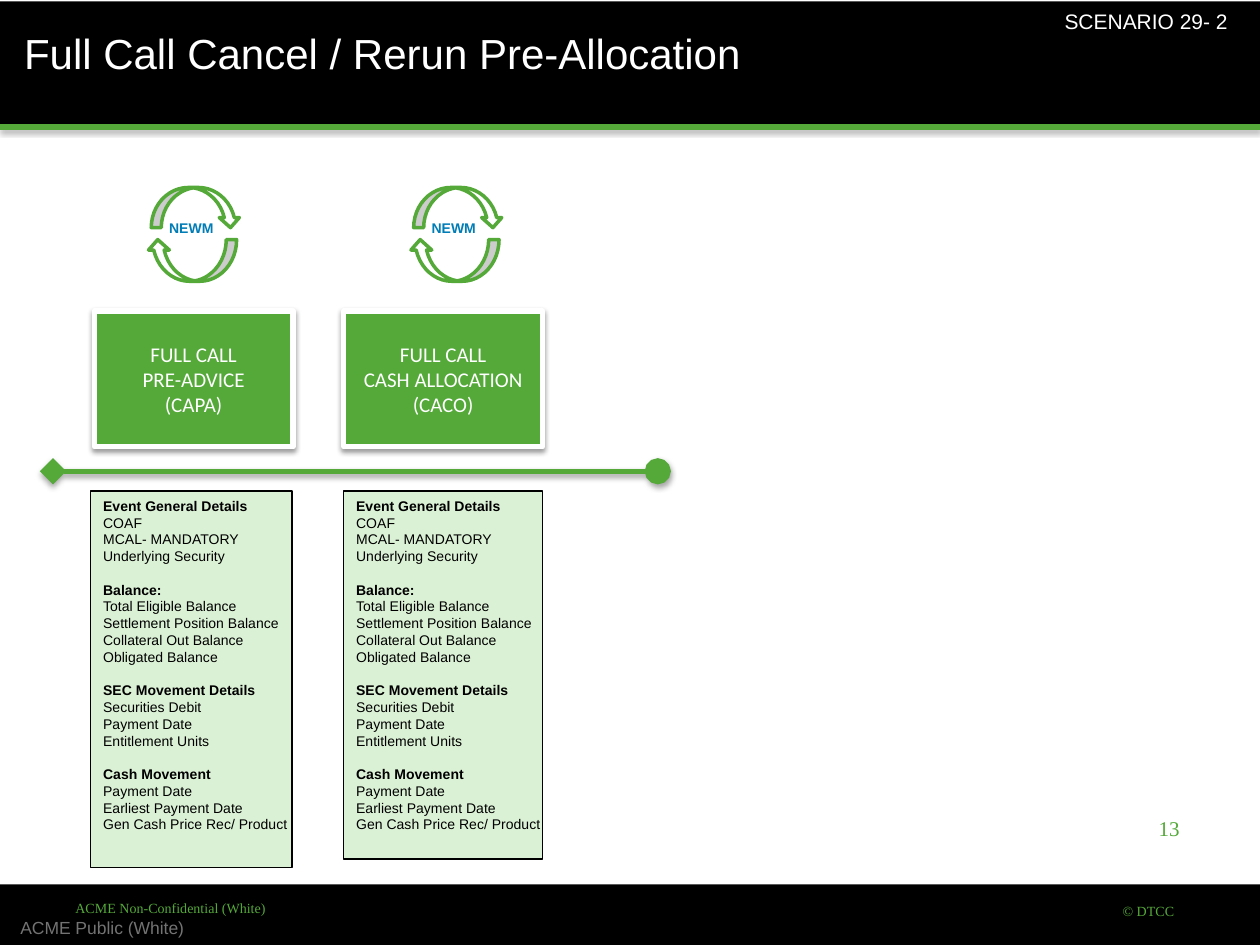
from lxml import etree
from pptx import Presentation
from pptx.dml.color import RGBColor
from pptx.enum.shapes import MSO_CONNECTOR, MSO_SHAPE
from pptx.enum.text import MSO_ANCHOR, MSO_AUTO_SIZE, PP_ALIGN
from pptx.oxml.ns import qn
from pptx.util import Cm, Pt

RECT, CURVED_ARROW = MSO_SHAPE.RECTANGLE, MSO_SHAPE.CURVED_DOWN_ARROW
STRAIGHT = MSO_CONNECTOR.STRAIGHT
TOP, MIDDLE = MSO_ANCHOR.TOP, MSO_ANCHOR.MIDDLE
LEFT, CENTER, RIGHT = PP_ALIGN.LEFT, PP_ALIGN.CENTER, PP_ALIGN.RIGHT
NO_AUTOSIZE = MSO_AUTO_SIZE.NONE

# Content
TITLE = "Full Call Cancel / Rerun Pre-Allocation"
SECTIONS = [
    ("Event General Details", ["COAF", "MCAL- MANDATORY", "Underlying Security"]),
    ("Balance:", ["Total Eligible Balance", "Settlement Position Balance",
                  "Collateral Out Balance", "Obligated Balance"]),
    ("SEC Movement Details", ["Securities Debit", "Payment Date", "Entitlement Units"]),
    ("Cash Movement", ["Payment Date", "Earliest Payment Date",
                       "Gen Cash Price Rec/ Product"]),
]
# Left edges of stage box and cycle, then the place of the details, in cm
STAGES = [
    {"lines": ["FULL CALL", "PRE-ADVICE", "(CAPA)"], "box": 1.9, "cycle": 2.97,
     "details": (1.83, 9.9, 4.06, 7.59)},
    {"lines": ["FULL CALL", "CASH ALLOCATION", "(CACO)"], "box": 6.93, "cycle": 8.26,
     "details": (6.93, 9.9, 4.01, 7.42)},
]
CYCLE_LABEL = "NEWM"
PUBLIC_LABEL, PAGE_NUMBER = "ACME Public (White)", "13"

THEME = {
    "green": "54A939", "pale": "DBF1D5", "blue": "007CB7", "grey": "737373",
    "black": "000000", "white": "FFFFFF",
    "sans": "Arial", "serif": "Times New Roman", "box_font": "Calibri",
    "title": 24, "normal": 12, "note": 10, "small": 8,
}
# Text, place, font, size, colour, alignment, wrap
LABELS = [
    ("© DTCC", (22.38, 18.06, 1.55, 0.61), "serif", "small", "green", LEFT, False),
    ("ACME Non-Confidential (White)", (1.27, 18.01, 6, 0.61),
     "serif", "small", "green", LEFT, True),
    (PUBLIC_LABEL, (0.41, 18.36, 4.09, 0.69), "sans", "note", "grey", LEFT, True),
    (PAGE_NUMBER, (22.33, 16.38, 1.7, 0.64), "serif", "normal", "green", RIGHT, True),
    ("SCENARIO 29- 2", (21.21, 0.05, 4.9, 0.76), "sans", "normal", "white", LEFT, True),
]


def color(key):
    return RGBColor.from_string(THEME[key])


def box_at(place):
    return [Cm(value) for value in place]


def style(paragraph, font, size, ink, align=LEFT, bold=False):
    paragraph.alignment = align
    for run in paragraph.runs:
        run.font.name, run.font.size = THEME[font], Pt(THEME[size])
        run.font.color.rgb, run.font.bold = color(ink), bold


def set_shadow(shape, alpha, distance=1.6):
    """Give the shape one soft shadow falling straight down."""
    properties = shape._element.spPr
    effects = properties.find(qn("a:effectLst"))
    if effects is None:
        effects = etree.SubElement(properties, qn("a:effectLst"))
    outer = etree.SubElement(effects, qn("a:outerShdw"), blurRad=str(Pt(3.1)),
                             dist=str(Pt(distance)), dir="5400000",
                             algn="t", rotWithShape="0")
    ink = etree.SubElement(outer, qn("a:srgbClr"), val=THEME["black"])
    etree.SubElement(ink, qn("a:alpha"), val=str(alpha * 1000))


def add_block(shapes, kind, place, fill, line=None, width=0):
    block = shapes.add_shape(kind, *box_at(place))
    block.shadow.inherit = False
    block.fill.solid()
    block.fill.fore_color.rgb = color(fill)
    if line:
        block.line.color.rgb = color(line)
        block.line.width = Pt(width)
    else:
        block.line.fill.background()
    return block


def add_rule(shapes, left, right, y, alpha, distance, ends=()):
    rule = shapes.add_connector(STRAIGHT, *box_at((left, y, right, y)))
    rule.line.color.rgb = color("green")
    rule.line.width = Pt(3)
    for tag, kind in ends:
        etree.SubElement(rule.line._get_or_add_ln(), qn(tag),
                         type=kind, w="lg", len="lg")
    set_shadow(rule, alpha, distance)


def add_label(shapes, text, place, font, size, ink, align=LEFT, wrap=True, bold=False):
    label = shapes.add_textbox(*box_at(place))
    frame = label.text_frame
    frame.word_wrap = wrap
    frame.text = text
    style(frame.paragraphs[0], font, size, ink, align, bold)
    return frame


def add_cycle(shapes, left):
    group = shapes.add_group_shape().shapes
    for x, y, height, rotation in [(left + 0.08, 3.78, 0.81, 0), (left, 4.83, 0.84, 180)]:
        arrow = add_block(group, CURVED_ARROW, (x, y, 1.8, height), "white", "green", 2)
        arrow.rotation = rotation
    add_label(group, CYCLE_LABEL, (left + 0.19, 4.31, 1.7, 0.56),
              "sans", "small", "blue", bold=True)


def add_stage_box(shapes, left, lines):
    box = add_block(shapes, RECT, (left, 6.27, 4.01, 2.74), "green", "white", 3)
    set_shadow(box, 38)
    frame = box.text_frame
    frame.word_wrap = False
    frame.vertical_anchor = MIDDLE
    frame.text = "\n".join(lines)
    for paragraph in frame.paragraphs:
        style(paragraph, "box_font", "normal", "white", CENTER)


def add_details(shapes, place):
    frame = add_block(shapes, RECT, place, "pale", "black", 0.75).text_frame
    frame.word_wrap = False
    frame.vertical_anchor = TOP
    rows = [(text, text == heading) for heading, items in SECTIONS
            for text in [heading, *items]]
    frame.text = "\n".join(text for text, _ in rows)
    for index, (paragraph, (_, is_heading)) in enumerate(zip(frame.paragraphs, rows)):
        style(paragraph, "sans", "small", "black", bold=is_heading)
        if is_heading and index:
            paragraph.space_before = Pt(9.6)


def main():
    deck = Presentation()
    deck.slide_width, deck.slide_height = Cm(25.4), Cm(19.05)
    slide = deck.slides.add_slide(deck.slide_layouts[5])
    shapes = slide.shapes

    # Header and footer bands
    for top, height in [(17.83, 1.22), (0.03, 2.54)]:
        add_block(shapes, RECT, (0, top, 25.4, height), "black")
    add_rule(shapes, 0, 25.4, 2.56, 38, 1.6)

    # Title, brought in front of the bands
    title = shapes.title
    title.left, title.top, title.width, title.height = box_at((0.23, 0.43, 19.48, 2.11))
    title.text_frame.text = TITLE
    title.text_frame.vertical_anchor = TOP
    title.text_frame.auto_size = NO_AUTOSIZE
    style(title.text_frame.paragraphs[0], "sans", "title", "white")
    shapes._spTree.append(title._element)

    # Small labels
    for label in LABELS:
        frame = add_label(shapes, *label)
        if label[0] in (PAGE_NUMBER, PUBLIC_LABEL):
            frame.vertical_anchor = MIDDLE
        if label[0] == PUBLIC_LABEL:
            frame.margin_left = frame.margin_right = 0
            frame.margin_top = frame.margin_bottom = 0

    # Timeline and its stages
    add_rule(shapes, 1.07, 13.26, 9.5, 35, 1.8,
             [("a:headEnd", "diamond"), ("a:tailEnd", "oval")])
    for stage in STAGES:
        add_stage_box(shapes, stage["box"], stage["lines"])
        add_cycle(shapes, stage["cycle"])
        add_details(shapes, stage["details"])

    deck.save("out.pptx")


if __name__ == "__main__":
    main()
